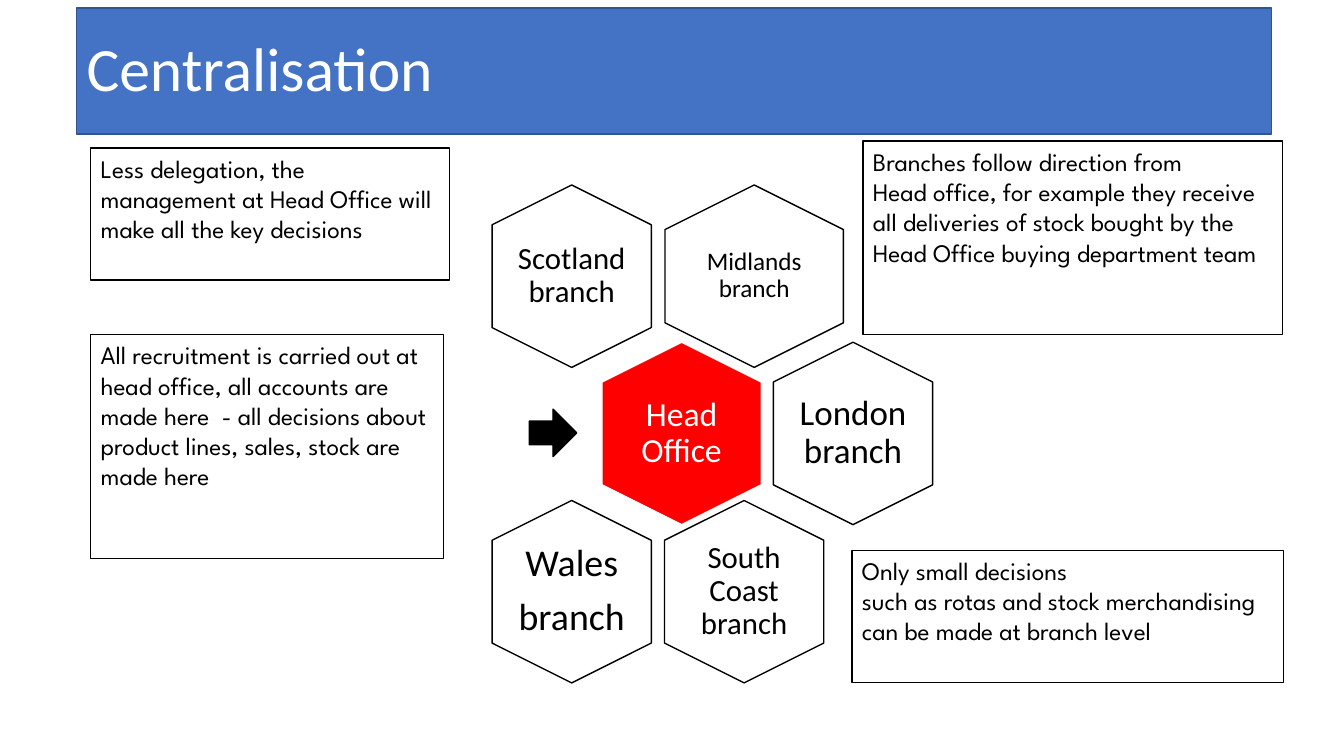
from pptx import Presentation
from pptx.dml.color import RGBColor
from pptx.enum.shapes import MSO_SHAPE
from pptx.enum.text import MSO_ANCHOR, PP_ALIGN
from pptx.util import Inches, Pt

deck = Presentation()
deck.slide_width, deck.slide_height = Inches(13.33), Inches(7.5)
slide = deck.slides.add_slide(deck.slide_layouts[6])


def draw(kind, left, top, width, height, fill, line):
    shape = slide.shapes.add_shape(
        kind, Inches(left), Inches(top), Inches(width), Inches(height))
    shape.shadow.inherit = False
    shape.fill.solid()
    shape.fill.fore_color.rgb = RGBColor.from_string(fill)
    shape.line.color.rgb = RGBColor.from_string(line)
    shape.line.width = Pt(1)
    return shape


def write(shape, text, size, font, color, align, anchor):
    frame = shape.text_frame
    frame.word_wrap = True
    frame.vertical_anchor = anchor
    frame.text = text
    for para in frame.paragraphs:
        para.alignment = align
        para.font.size = Pt(size)
        para.font.name = font
        para.font.color.rgb = RGBColor.from_string(color)
    return frame


title = draw(MSO_SHAPE.RECTANGLE, 0.76, 0.08, 11.85, 1.25, "4472C4", "325491")
frame = write(title, "Centralisation", 44, "Calibri", "FFFFFF",
              PP_ALIGN.LEFT, MSO_ANCHOR.MIDDLE)
frame.paragraphs[0].line_spacing = 0.9

top, mid, low = 2.74, 4.3, 5.87
cells = [
    ("Midlands branch", 7.48, top, 1.77, 18, "FFFFFF", "000000"),
    ("Scotland branch", 5.67, top, 1.58, 22, "FFFFFF", "000000"),
    ("Head Office", 6.76, mid, 1.58, 24, "FF0000", "FFFFFF"),
    ("London branch", 8.46, mid, 1.58, 25, "FFFFFF", "000000"),
    ("South Coast branch", 7.38, low, 1.58, 22, "FFFFFF", "000000"),
    ("Wales\nbranch", 5.67, low, 1.58, 27, "FFFFFF", "000000"),
]
long, wide, tall = 1.81, 1.08, 1.25
for text, x, y, across, size, fill, ink in cells:
    cell = draw(MSO_SHAPE.HEXAGON, x - long / 2, y - across / 2,
                long, across, fill, ink)
    cell.rotation = 90
    label = slide.shapes.add_textbox(
        Inches(x - wide / 2), Inches(y - tall / 2), Inches(wide), Inches(tall))
    frame = write(label, text, size, "Calibri", ink,
                  PP_ALIGN.CENTER, MSO_ANCHOR.MIDDLE)
    frame.margin_left = frame.margin_right = 0
    frame.margin_top = frame.margin_bottom = 0
    for para in frame.paragraphs:
        para.line_spacing = 0.9
        para.space_after = Pt(size * 0.35)

notes = [
    (8.56, 1.4, 4.16, 1.92,
     "Branches follow direction from\n"
     "Head office, for example they receive all deliveries of stock "
     "bought by the Head Office buying department team"),
    (8.45, 5.46, 4.28, 1.31,
     "Only small decisions\nsuch as rotas and stock merchandising\n"
     "can be made at branch level"),
    (0.9, 1.47, 3.56, 1.31,
     "Less delegation, the management at Head Office will make all "
     "the key decisions"),
    (0.9, 3.32, 3.5, 2.22,
     "All recruitment is carried out at head office, all accounts are "
     "made here  - all decisions about product lines, sales, stock are "
     "made here"),
]
for left, top, width, height, text in notes:
    note = draw(MSO_SHAPE.RECTANGLE, left, top, width, height,
                "FFFFFF", "000000")
    write(note, text, 18, "League Spartan", "000000",
          PP_ALIGN.LEFT, MSO_ANCHOR.TOP)

draw(MSO_SHAPE.RIGHT_ARROW, 5.25, 4.06, 0.47, 0.47, "000000", "000000")

deck.save("out.pptx")
